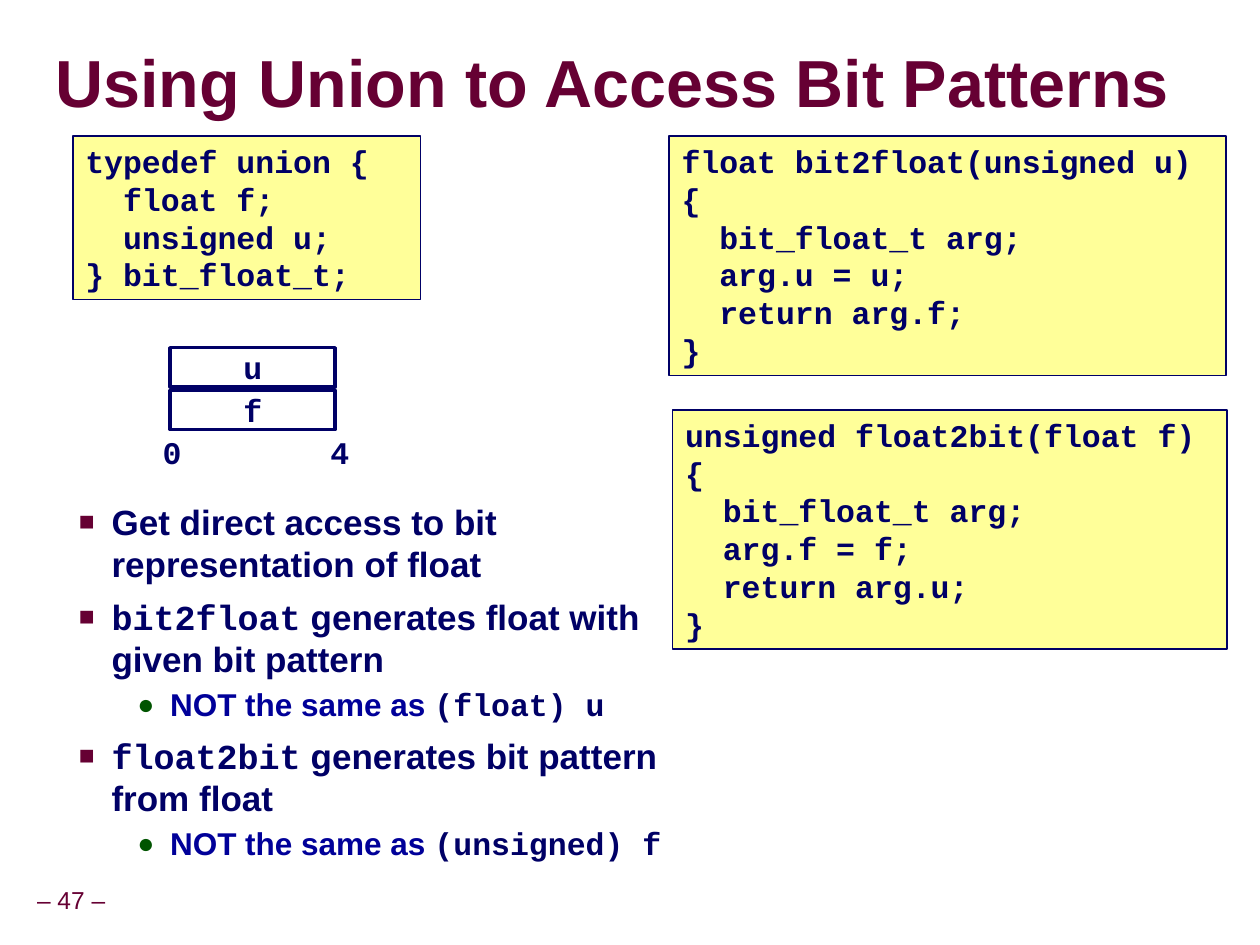
from lxml.etree import SubElement
from pptx import Presentation
from pptx.dml.color import RGBColor
from pptx.enum.shapes import MSO_SHAPE as Preset
from pptx.enum.text import MSO_ANCHOR as Anchor, PP_ALIGN as Align
from pptx.oxml.ns import qn
from pptx.util import Cm, Pt

MAROON = RGBColor(0x66, 0x00, 0x33)
NAVY = RGBColor(0x00, 0x00, 0x66)
BLUE = RGBColor(0x00, 0x00, 0x99)
GREEN = RGBColor(0x00, 0x54, 0x00)
YELLOW = RGBColor(0xFF, 0xFF, 0x99)
WHITE = RGBColor(0xFF, 0xFF, 0xFF)
SANS, MONO = "Arial", "Courier New"

UNION_CODE = """typedef union {
  float f;
  unsigned u;
} bit_float_t;"""
TO_FLOAT_CODE = """float bit2float(unsigned u) {
  bit_float_t arg;
  arg.u = u;
  return arg.f;
}"""
TO_BITS_CODE = """unsigned float2bit(float f) {
  bit_float_t arg;
  arg.f = f;
  return arg.u;
}"""

BULLETS = [
    (1, [("Get direct access to bit representation of float", SANS)]),
    (1, [("bit2float", MONO), (" generates float with given bit pattern", SANS)]),
    (2, [("NOT the same as ", SANS), ("(float) u", MONO)]),
    (1, [("float2bit", MONO), (" generates bit pattern from float", SANS)]),
    (2, [("NOT the same as ", SANS), ("(unsigned) f", MONO)]),
]
LEVELS = {
    1: dict(size=20, color=NAVY, left=2.0, before=6.2, pitch=24,
            mark="■", mark_color=MAROON, mark_size=75),
    2: dict(size=18, color=BLUE, left=3.18, before=2.2, pitch=23,
            mark="●", mark_color=GREEN, mark_size=90),
}


def style_font(font, name, size, color, bold=True):
    font.name = name
    font.size = Pt(size)
    font.bold = bold
    font.color.rgb = color


def write_code(shape, code, align=Align.LEFT):
    frame = shape.text_frame
    frame.text = code
    for paragraph in frame.paragraphs:
        paragraph.alignment = align
        paragraph.line_spacing = Pt(21.6)
        style_font(paragraph.font, MONO, 18, NAVY)


def add_rectangle(slide, left, top, width, height, fill, line_width):
    shape = slide.shapes.add_shape(
        Preset.RECTANGLE, Cm(left), Cm(top), Cm(width), Cm(height))
    shape.shadow.inherit = False
    shape.fill.solid()
    shape.fill.fore_color.rgb = fill
    shape.line.color.rgb = NAVY
    shape.line.width = Pt(line_width)
    return shape


def add_code_box(slide, left, top, width, height, code):
    shape = add_rectangle(slide, left, top, width, height, YELLOW, 1)
    shape.text_frame.vertical_anchor = Anchor.TOP
    shape.text_frame.word_wrap = True
    write_code(shape, code)


def add_field(slide, top, name):
    shape = add_rectangle(slide, 3.43, top, 3.33, 0.79, WHITE, 2)
    shape.text_frame.vertical_anchor = Anchor.MIDDLE
    shape.text_frame.word_wrap = False
    write_code(shape, name, Align.CENTER)


def add_offset(slide, left, offset):
    box = slide.shapes.add_textbox(Cm(left), Cm(8.61), Cm(0.89), Cm(1.02))
    box.text_frame.word_wrap = False
    write_code(box, offset, Align.RIGHT)


def add_line_of_text(slide, left, top, width, height, text, size, bold, spacing, align):
    box = slide.shapes.add_textbox(Cm(left), Cm(top), Cm(width), Cm(height))
    frame = box.text_frame
    frame.word_wrap = True
    frame.vertical_anchor = Anchor.MIDDLE
    frame.margin_left = frame.margin_right = 0
    frame.margin_top = frame.margin_bottom = 0
    frame.text = text
    paragraph = frame.paragraphs[0]
    paragraph.alignment = align
    paragraph.line_spacing = spacing
    style_font(paragraph.font, SANS, size, MAROON, bold)


def set_bullet(paragraph, level):
    properties = paragraph._p.get_or_add_pPr()
    properties.set("marL", str(Cm(level["left"])))
    properties.set("indent", str(-Cm(0.66)))
    color = SubElement(properties, qn("a:buClr"))
    SubElement(color, qn("a:srgbClr"), val=str(level["mark_color"]))
    SubElement(properties, qn("a:buSzPct"), val=str(level["mark_size"] * 1000))
    SubElement(properties, qn("a:buFont"), typeface=SANS)
    SubElement(properties, qn("a:buChar"), char=level["mark"])


def add_bullets(slide):
    box = slide.shapes.add_textbox(Cm(0), Cm(9.96), Cm(13.59), Cm(8.38))
    frame = box.text_frame
    frame.word_wrap = True
    for index, (depth, pieces) in enumerate(BULLETS):
        level = LEVELS[depth]
        paragraph = frame.add_paragraph() if index else frame.paragraphs[0]
        paragraph.level = depth - 1
        paragraph.space_before = Pt(level["before"])
        paragraph.line_spacing = Pt(level["pitch"])
        set_bullet(paragraph, level)
        for text, font_name in pieces:
            run = paragraph.add_run()
            run.text = text
            color = NAVY if font_name == MONO else level["color"]
            style_font(run.font, font_name, level["size"], color)


def main():
    presentation = Presentation()
    presentation.slide_width = Cm(25.4)
    presentation.slide_height = Cm(19.05)
    slide = presentation.slides.add_slide(presentation.slide_layouts[6])

    add_line_of_text(slide, 0, 17.75, 2.87, 0.86, "– 47 –", 14, False, 0.9, Align.CENTER)
    add_code_box(slide, 1.47, 2.74, 7.01, 3.3, UNION_CODE)
    add_code_box(slide, 13.49, 2.74, 11.23, 4.83, TO_FLOAT_CODE)
    add_field(slide, 7.01, "u")
    add_field(slide, 7.87, "f")
    add_offset(slide, 3.02, "0")
    add_offset(slide, 6.4, "4")
    add_code_box(slide, 13.56, 8.26, 11.18, 4.83, TO_BITS_CODE)
    add_bullets(slide)
    add_line_of_text(slide, 1.12, 0.69, 24.16, 2.11,
                     "Using Union to Access Bit Patterns", 38, True, 0.87, Align.LEFT)
    presentation.save("out.pptx")


if __name__ == "__main__":
    main()
